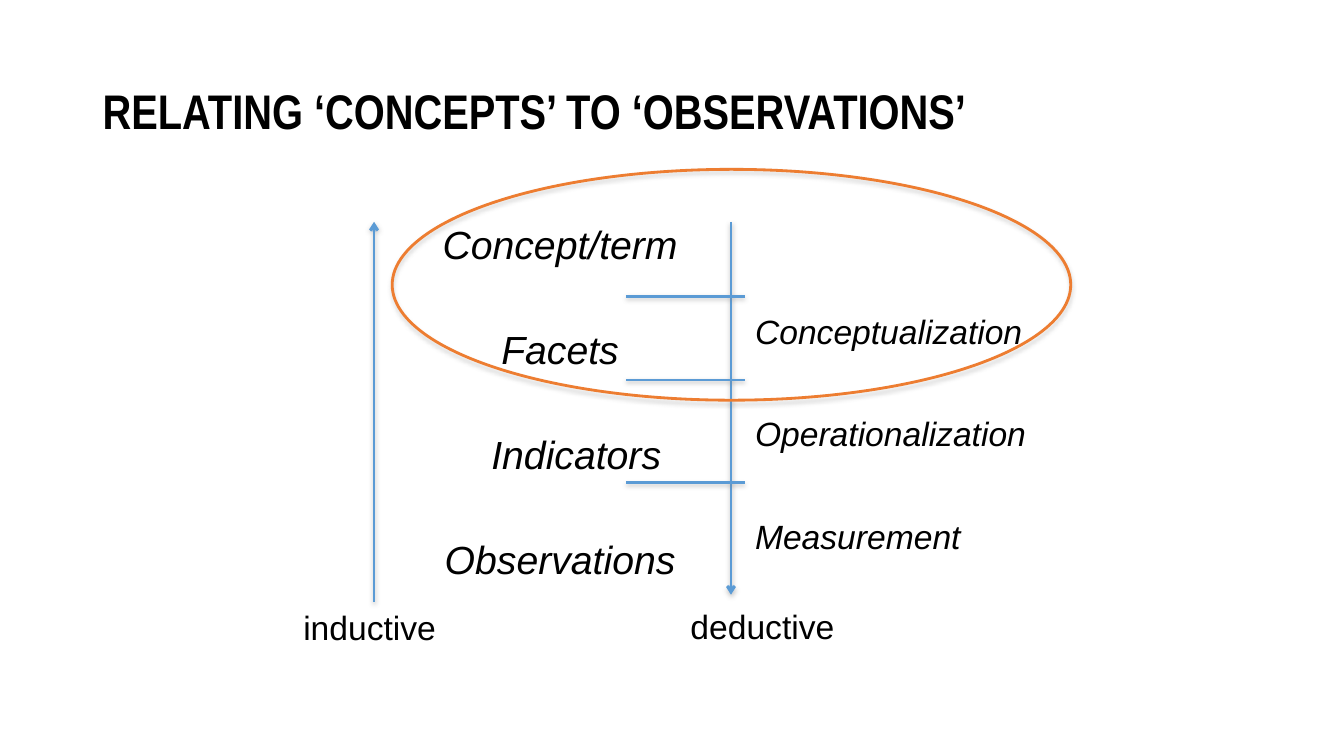
from dataclasses import dataclass

from lxml.etree import SubElement
from pptx import Presentation
from pptx.dml.color import RGBColor
from pptx.enum.shapes import MSO_CONNECTOR, MSO_SHAPE
from pptx.enum.text import MSO_ANCHOR, PP_ALIGN
from pptx.oxml.ns import qn
from pptx.util import Inches, Pt


@dataclass(frozen=True)
class Theme:
    """Colours, fonts and sizes of the slide."""
    ink: str = "000000"
    blue: str = "5B9BD5"
    orange: str = "ED7D31"
    shade: str = "808080"
    head: str = "Arial Narrow"
    body: str = "Arial"
    title: float = 34.7
    large: float = 28
    small: float = 24
    line: float = 2


THEME = Theme()


def add_text(slide, box, lines, size, font=THEME.body, bold=False,
             italic=False, align=PP_ALIGN.LEFT, lead=1.0, gap=0, top=0.05,
             anchor=MSO_ANCHOR.TOP, wrap=True):
    """Add a text box with one paragraph per (text, indent) line."""
    shape = slide.shapes.add_textbox(*map(Inches, box))
    frame = shape.text_frame
    frame.word_wrap = wrap
    frame.vertical_anchor = anchor
    frame.margin_top = Inches(top)
    for i, (text, indent) in enumerate(lines):
        para = frame.add_paragraph() if i else frame.paragraphs[0]
        if indent:
            para._p.get_or_add_pPr().set("marL", str(Inches(indent)))
        para.alignment = align
        para.line_spacing = lead
        para.space_before = Pt(gap if i else 0)
        run = para.add_run()
        run.text = text
        run.font.name = font
        run.font.size = Pt(size)
        run.font.bold = bold
        run.font.italic = italic
        run.font.color.rgb = RGBColor.from_string(THEME.ink)


def add_shade(shape, alpha, dist):
    """Give a shape a soft shadow that falls straight down."""
    props = shape._element.spPr
    effects = props.find(qn("a:effectLst"))
    if effects is None:
        effects = SubElement(props, qn("a:effectLst"))
    shadow = SubElement(effects, qn("a:outerShdw"), blurRad=str(Pt(3.1)),
                        dist=str(Pt(dist)), dir="5400000", rotWithShape="0")
    color = SubElement(shadow, qn("a:srgbClr"), val=THEME.shade)
    SubElement(color, qn("a:alpha"), val=str(alpha * 1000))


def add_line(slide, start, end, arrow=False):
    """Draw a blue line, with an arrowhead at its end if asked."""
    line = slide.shapes.add_connector(
        MSO_CONNECTOR.STRAIGHT, *map(Inches, (*start, *end)))
    line.line.color.rgb = RGBColor.from_string(THEME.blue)
    line.line.width = Pt(THEME.line)
    if arrow:
        SubElement(line.line._get_or_add_ln(), qn("a:tailEnd"), type="arrow")
    add_shade(line, 38, 1.6)


def add_title(slide, box):
    """Place the heading in its box."""
    add_text(slide, box, [("RELATING ‘CONCEPTS’ TO ‘OBSERVATIONS’", 0)],
             THEME.title, THEME.head, bold=True, lead=0.9,
             anchor=MSO_ANCHOR.MIDDLE)


def add_steps(slide, box):
    """List the steps between the levels."""
    steps = ("Conceptualization", "Operationalization", "Measurement")
    add_text(slide, box, [(step, 0) for step in steps], THEME.small,
             italic=True, lead=0.9, gap=47.2, top=1.17)


def add_axes(slide, box):
    """Draw both arrows, their labels and the level marks."""
    left, top, width, height = box
    right, base = left + width, top + height
    add_line(slide, (left, base), (left, top), True)
    add_line(slide, (right, top), (right, base - 0.07), True)
    labels = (("deductive", right - 0.5, base - 0.01, 1.64),
              ("inductive", left - 0.8, base, 1.53))
    for text, x, y, span in labels:
        add_text(slide, (x, y, span, 0.5), [(text, 0)], THEME.small,
                 wrap=False)
    for drop in (0.74, 1.57, 2.59):
        add_line(slide, (right - 1.04, top + drop), (right + 0.14, top + drop))


def add_ring(slide, box):
    """Circle the upper levels."""
    ring = slide.shapes.add_shape(MSO_SHAPE.OVAL, *map(Inches, box))
    ring.fill.background()
    ring.line.color.rgb = RGBColor.from_string(THEME.orange)
    ring.line.width = Pt(THEME.line)
    ring.shadow.inherit = False
    add_shade(ring, 35, 1.8)


def add_levels(slide, box):
    """List the levels from concept to observation."""
    levels = (("Concept/term", 0), ("Facets", 0), ("Indicators", 0.32),
              ("Observations", 0))
    add_text(slide, box, levels, THEME.large, italic=True,
             align=PP_ALIGN.CENTER, lead=0.8, gap=48, top=0.08)


def main():
    """Build the slide and save it."""
    deck = Presentation()
    deck.slide_width, deck.slide_height = Inches(13.33), Inches(7.5)
    slide = deck.slides.add_slide(deck.slide_layouts[6])
    add_title(slide, (0.92, 0.4, 11.5, 1.45))
    add_steps(slide, (7.39, 1.96, 3.08, 3.78))
    add_axes(slide, (3.71, 2.2, 3.54, 3.77))
    add_ring(slide, (3.89, 1.68, 6.73, 2.29))
    add_levels(slide, (3.89, 2.2, 3.33, 3.71))
    deck.save("out.pptx")


if __name__ == "__main__":
    main()
